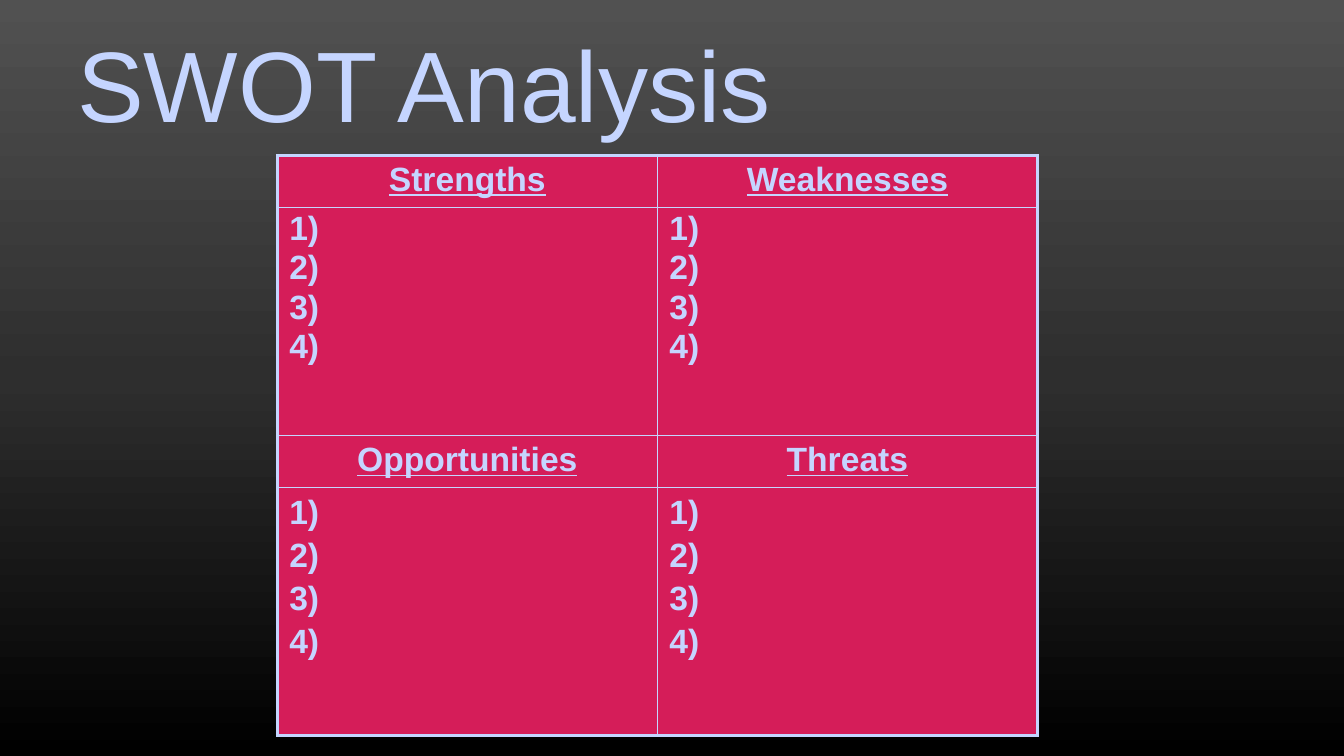
from copy import deepcopy

from lxml import etree
from pptx import Presentation
from pptx import util as u
from pptx.dml.color import RGBColor
from pptx.enum import text
from pptx.oxml import ns

WIDTH, HEIGHT = u.Inches(13.33), u.Inches(7.5)
PALE_BLUE = RGBColor(0xC5, 0xD5, 0xFF)
CRIMSON = RGBColor(0xD5, 0x1D, 0x59)
BACKGROUND = [
    (0, RGBColor(0x51, 0x51, 0x51)),
    (0.5, RGBColor(0x2E, 0x2E, 0x2E)),
    (1, RGBColor(0, 0, 0)),
]
QUADRANTS = [["Strengths", "Weaknesses"], ["Opportunities", "Threats"]]
ITEMS = ["1)", "2)", "3)", "4)"]
ITEM_LINE_SPACING = [0.9, 1.0]
ROW_HEIGHTS = [0.52, 2.26, 0.52, 2.46]
COLUMN_WIDTH = 3.77
OUTER_LINE, INNER_LINE = 2.25, 1
CELL_FORMAT = {
    "margin_left": u.Inches(0.12),
    "margin_right": u.Inches(0.12),
    "margin_top": u.Inches(0.06),
    "margin_bottom": u.Inches(0.06),
}
TITLE_FONT = {"name": "Arial", "size": u.Pt(71.5)}
ITEM_FONT = {"name": "Arial", "size": u.Pt(24), "bold": True}
HEADING_FONT = {**ITEM_FONT, "underline": True}
HEADING_PARAGRAPH = {"alignment": text.PP_ALIGN.CENTER, "space_before": u.Pt(4)}


def apply_format(target, values):
    for name, value in values.items():
        setattr(target, name, value)


def write_paragraphs(frame, lines, paragraph_format, font_format):
    for index, line in enumerate(lines):
        paragraph = frame.add_paragraph() if index else frame.paragraphs[0]
        apply_format(paragraph, paragraph_format)
        run = paragraph.add_run()
        run.text = line
        apply_format(run.font, font_format)
        run.font.color.rgb = PALE_BLUE


def paint_background(slide):
    fill = slide.background.fill
    fill.gradient()
    fill.gradient_angle = 270
    stop_list = slide.background.fill._xPr.find(".//" + ns.qn("a:gsLst"))
    stop_list.insert(1, deepcopy(stop_list[0]))
    for stop, (position, color) in zip(fill.gradient_stops, BACKGROUND):
        stop.position = position
        stop.color.rgb = color


def add_title(slide, words):
    title = slide.shapes.title
    apply_format(title, {
        "left": int(WIDTH * 0.05),
        "top": u.Inches(0.28),
        "width": u.Inches(12.21),
        "height": u.Inches(1.23),
    })
    frame = title.text_frame
    apply_format(frame, {
        "word_wrap": True,
        "auto_size": text.MSO_AUTO_SIZE.NONE,
        "vertical_anchor": text.MSO_ANCHOR.MIDDLE,
    })
    paragraph_format = {"alignment": text.PP_ALIGN.LEFT, "line_spacing": 0.9}
    write_paragraphs(frame, [words], paragraph_format, TITLE_FONT)


def add_borders(cell, outer_sides):
    """Draw all four cell borders, heavier on the sides at the table's edge."""
    properties = cell._tc.get_or_add_tcPr()
    for side in "LRTB":
        points = OUTER_LINE if side in outer_sides else INNER_LINE
        line = etree.SubElement(properties, ns.qn(f"a:ln{side}"), w=str(u.Pt(points)))
        fill = etree.SubElement(line, ns.qn("a:solidFill"))
        etree.SubElement(fill, ns.qn("a:srgbClr"), val=str(PALE_BLUE))


def style_cell(cell, row, column):
    outer_sides = "LR"[column]
    if row == 0:
        outer_sides += "T"
    if row == len(ROW_HEIGHTS) - 1:
        outer_sides += "B"
    add_borders(cell, outer_sides)
    apply_format(cell, CELL_FORMAT)
    cell.fill.solid()
    cell.fill.fore_color.rgb = CRIMSON


def add_swot_table(slide):
    table = slide.shapes.add_table(
        len(ROW_HEIGHTS), 2, u.Inches(2.75), u.Inches(1.54),
        u.Inches(2 * COLUMN_WIDTH), u.Inches(sum(ROW_HEIGHTS)),
    ).table
    apply_format(table, {"first_row": False, "horz_banding": False})
    for table_row, height in zip(table.rows, ROW_HEIGHTS):
        table_row.height = u.Inches(height)
    for band, headings in enumerate(QUADRANTS):
        item_paragraph = {
            "line_spacing": ITEM_LINE_SPACING[band],
            "space_before": u.Pt(4),
        }
        for column, heading in enumerate(headings):
            heading_cell = table.cell(2 * band, column)
            items_cell = table.cell(2 * band + 1, column)
            style_cell(heading_cell, 2 * band, column)
            style_cell(items_cell, 2 * band + 1, column)
            write_paragraphs(heading_cell.text_frame, [heading],
                             HEADING_PARAGRAPH, HEADING_FONT)
            write_paragraphs(items_cell.text_frame, ITEMS, item_paragraph, ITEM_FONT)


def main():
    presentation = Presentation()
    presentation.slide_width, presentation.slide_height = WIDTH, HEIGHT
    slide = presentation.slides.add_slide(presentation.slide_layouts[5])
    paint_background(slide)
    add_title(slide, "SWOT Analysis")
    add_swot_table(slide)
    presentation.save("out.pptx")


if __name__ == "__main__":
    main()
